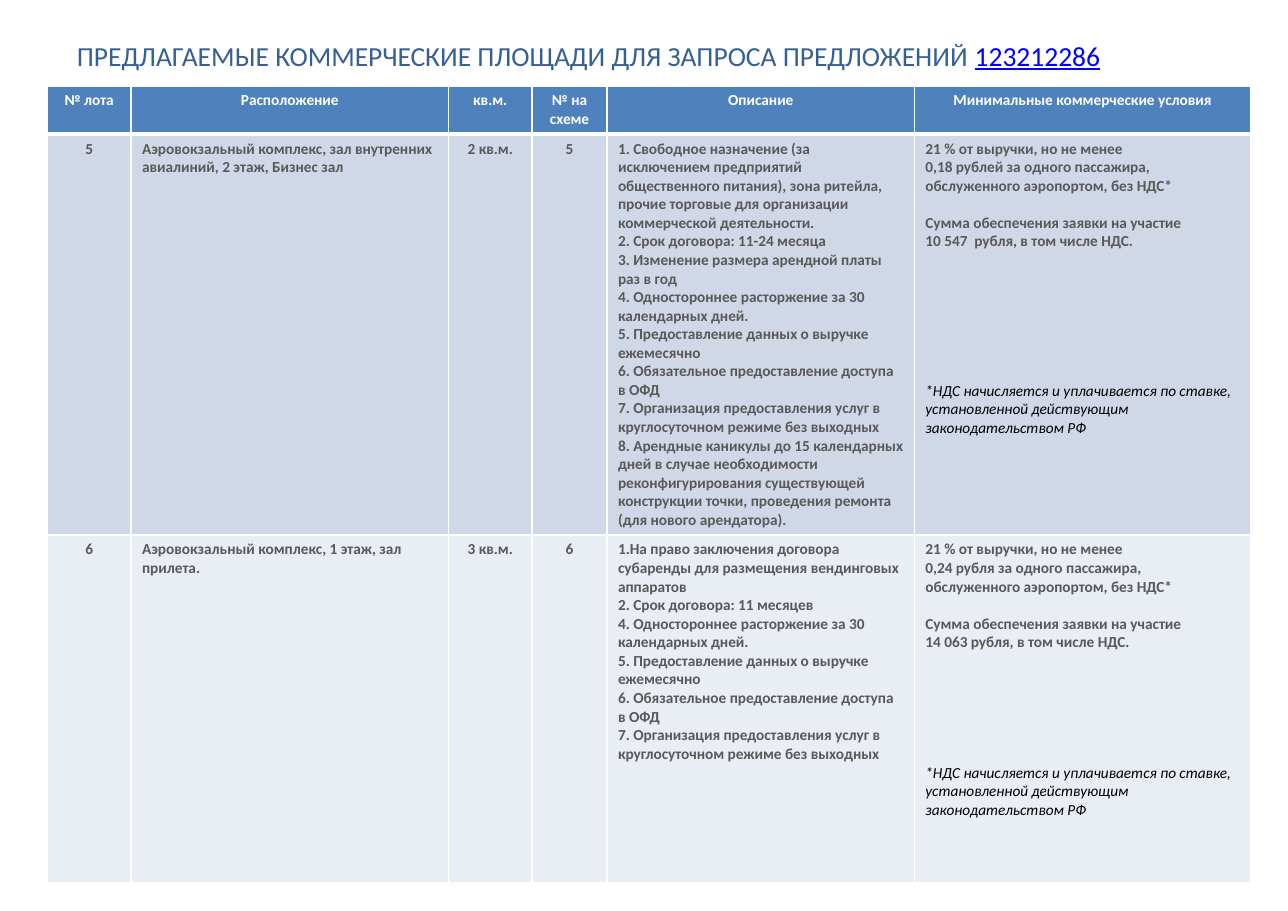
import pptx
import pptx.dml.color
import pptx.enum.text
import pptx.oxml.ns
import pptx.util
from lxml import etree

Inches = pptx.util.Inches
Pt = pptx.util.Pt
RGBColor = pptx.dml.color.RGBColor
CENTER = pptx.enum.text.PP_ALIGN.CENTER
LEFT = pptx.enum.text.PP_ALIGN.LEFT
qn = pptx.oxml.ns.qn

WHITE = RGBColor(0xFF, 0xFF, 0xFF)
BLACK = RGBColor(0, 0, 0)
GRAY = RGBColor(0x59, 0x59, 0x59)
HEADER_BLUE = RGBColor(0x4F, 0x81, 0xBD)
TITLE_BLUE = RGBColor(0x37, 0x60, 0x92)
NUMBER_BLUE = RGBColor(0, 0, 0xFF)
ROW_FILLS = [HEADER_BLUE, RGBColor(0xD0, 0xD8, 0xE8), RGBColor(0xE9, 0xED, 0xF4)]

LINE = 12.2  # height of one line of 10 pt text, in points
COLUMN_WIDTHS = [0.76, 2.88, 0.76, 0.68, 2.79, 3.05]
ROW_HEIGHTS = [0.41, 3.61, 3.16]
CENTERED_COLUMNS = {0, 2, 3}

HEADERS = ["№ лота", "Расположение", "кв.м.", "№ на схеме", "Описание",
           "Минимальные коммерческие условия"]
TERMINATION = "4. Одностороннее расторжение за 30 календарных дней."
COMMON_TERMS = [
    TERMINATION,
    "5. Предоставление данных о выручке ежемесячно",
    "6. Обязательное предоставление доступа в ОФД",
    "7. Организация предоставления услуг в круглосуточном режиме без выходных",
]
LOT_5_TERMS = [
    "1. Свободное назначение (за исключением предприятий общественного питания), "
    "зона ритейла, прочие торговые для организации коммерческой деятельности.",
    "2. Срок договора: 11-24 месяца",
    "3. Изменение размера арендной платы раз в год",
    *COMMON_TERMS,
    "8. Арендные каникулы до 15 календарных дней в случае необходимости "
    "реконфигурирования существующей конструкции точки, проведения ремонта "
    "(для нового арендатора).",
]
LOT_6_TERMS = [
    {"text": "На право заключения договора субаренды для размещения вендинговых аппаратов",
     "numbered": True},
    "2. Срок договора: 11 месяцев",
    *COMMON_TERMS,
]


def conditions(rate, deposit, note_gap):
    """Payment conditions of a lot; note_gap is the number of lines above the note."""
    return [
        "21 % от выручки, но не менее",
        f"{rate} за одного пассажира, обслуженного аэропортом, без НДС*",
        {"text": "Сумма обеспечения заявки на участие", "before": LINE},
        f"{deposit}, в том числе НДС.",
        {"text": "*НДС начисляется и уплачивается по ставке, установленной "
                 "действующим законодательством РФ",
         "before": note_gap * LINE, "color": BLACK, "bold": False, "italic": True},
    ]


ROWS = [
    [[header] for header in HEADERS],
    [["5"], ["Аэровокзальный комплекс, зал внутренних авиалиний, 2 этаж, Бизнес зал"],
     ["2 кв.м."], ["5"], LOT_5_TERMS,
     conditions("0,18 рублей", "10 547  рубля", 7)],
    [["6"], ["Аэровокзальный комплекс, 1 этаж, зал прилета."],
     ["3 кв.м."], ["6"], LOT_6_TERMS,
     conditions("0,24 рубля", "14 063 рубля", 6)],
]


def write(para, text, size=10, color=GRAY, bold=True, italic=False, underline=False,
          align=LEFT, before=0, numbered=False):
    """Add a formatted span to a paragraph."""
    para.alignment = align
    para.space_before = Pt(before)
    if numbered:
        properties = para._p.get_or_add_pPr()
        properties.set("marL", "0")
        properties.set("indent", str(-Inches(0.25)))
        etree.SubElement(properties, qn("a:buAutoNum"), type="arabicPeriod")
    span = para.add_run()
    span.text = text
    font = span.font
    font.name, font.size = "Calibri", Pt(size)
    font.bold, font.italic, font.underline = bold, italic, underline
    font.color.rgb = color


def set_borders(cell, bottom):
    """Draw white borders, 1 pt except for the bottom one."""
    properties = cell._tc.get_or_add_tcPr()
    widths = {"lnL": 1, "lnR": 1, "lnT": 1, "lnB": bottom}
    for position, (side, width) in enumerate(widths.items()):
        line = etree.Element(qn(f"a:{side}"), w=str(Pt(width)))
        fill = etree.SubElement(line, qn("a:solidFill"))
        etree.SubElement(fill, qn("a:srgbClr"), val=str(WHITE))
        properties.insert(position, line)


class LotPage:
    def __init__(self, deck):
        self.page = deck.slides.add_slide(deck.slide_layouts[6])

    def title(self, left, top, width, height, text, number):
        box = self.page.shapes.add_textbox(*map(Inches, (left, top, width, height)))
        box.text_frame.word_wrap = True
        para = box.text_frame.paragraphs[0]
        write(para, text, size=18, color=TITLE_BLUE, bold=False)
        write(para, number, size=18, color=NUMBER_BLUE, bold=False, underline=True)

    def table(self, left, top):
        table = self.page.shapes.add_table(
            len(ROWS), len(COLUMN_WIDTHS), Inches(left), Inches(top),
            Inches(sum(COLUMN_WIDTHS)), Inches(sum(ROW_HEIGHTS))).table
        for column, width in zip(table.columns, COLUMN_WIDTHS):
            column.width = Inches(width)
        for row, height in zip(table.rows, ROW_HEIGHTS):
            row.height = Inches(height)
        for row, contents in enumerate(ROWS):
            for column, entries in enumerate(contents):
                self.fill_cell(table.cell(row, column), row, column, entries)

    def fill_cell(self, cell, row, column, entries):
        header = row == 0
        cell.fill.solid()
        cell.fill.fore_color.rgb = ROW_FILLS[row]
        set_borders(cell, bottom=3 if header else 1)
        style = {"align": CENTER if header or column in CENTERED_COLUMNS else LEFT,
                 "color": WHITE if header else GRAY}
        frame = cell.text_frame
        for index, entry in enumerate(entries):
            para = frame.add_paragraph() if index else frame.paragraphs[0]
            details = entry if isinstance(entry, dict) else {"text": entry}
            write(para, **{**style, **details})


def main():
    deck = pptx.Presentation()
    deck.slide_width, deck.slide_height = Inches(11.69), Inches(8.27)
    lots = LotPage(deck)
    lots.table(0.43, 0.78)
    lots.title(0.6, 0.3, 10.67, 0.68,
               "ПРЕДЛАГАЕМЫЕ КОММЕРЧЕСКИЕ ПЛОЩАДИ ДЛЯ ЗАПРОСА ПРЕДЛОЖЕНИЙ ", "123212286")
    deck.save("out.pptx")


if __name__ == "__main__":
    main()
